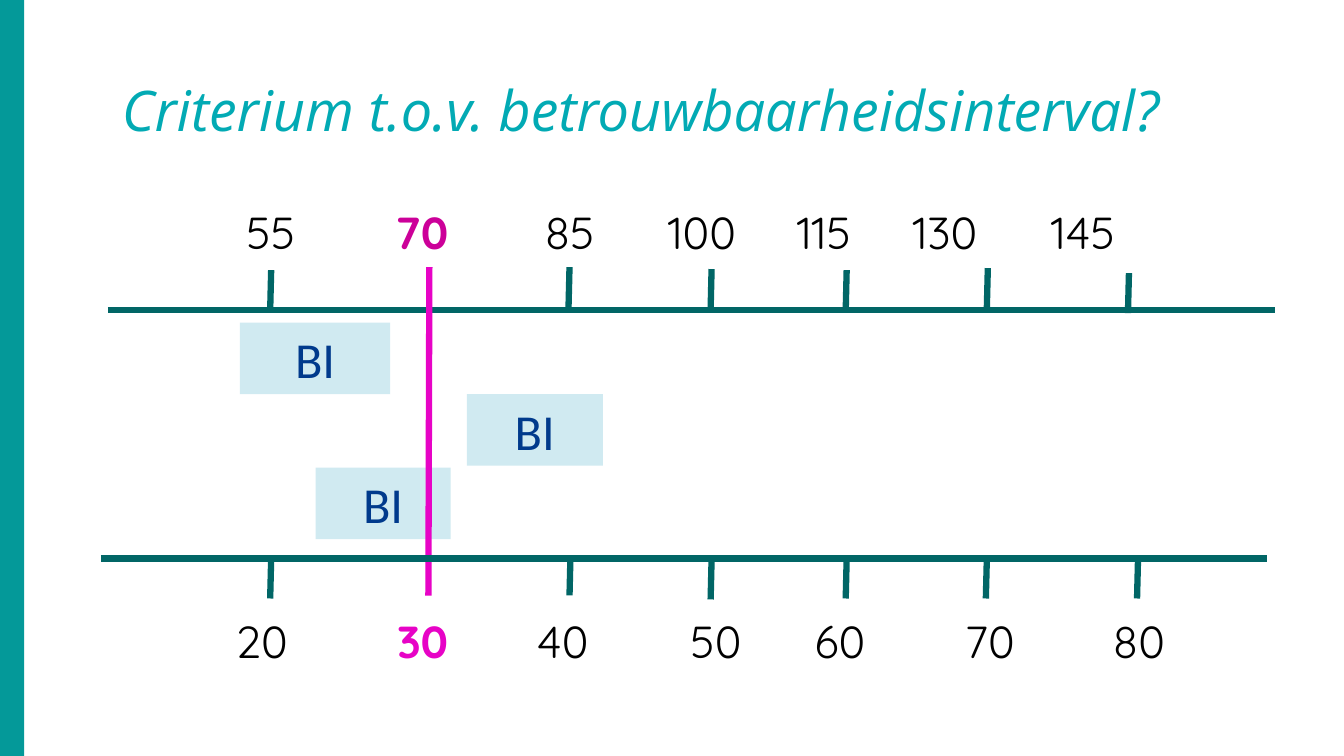
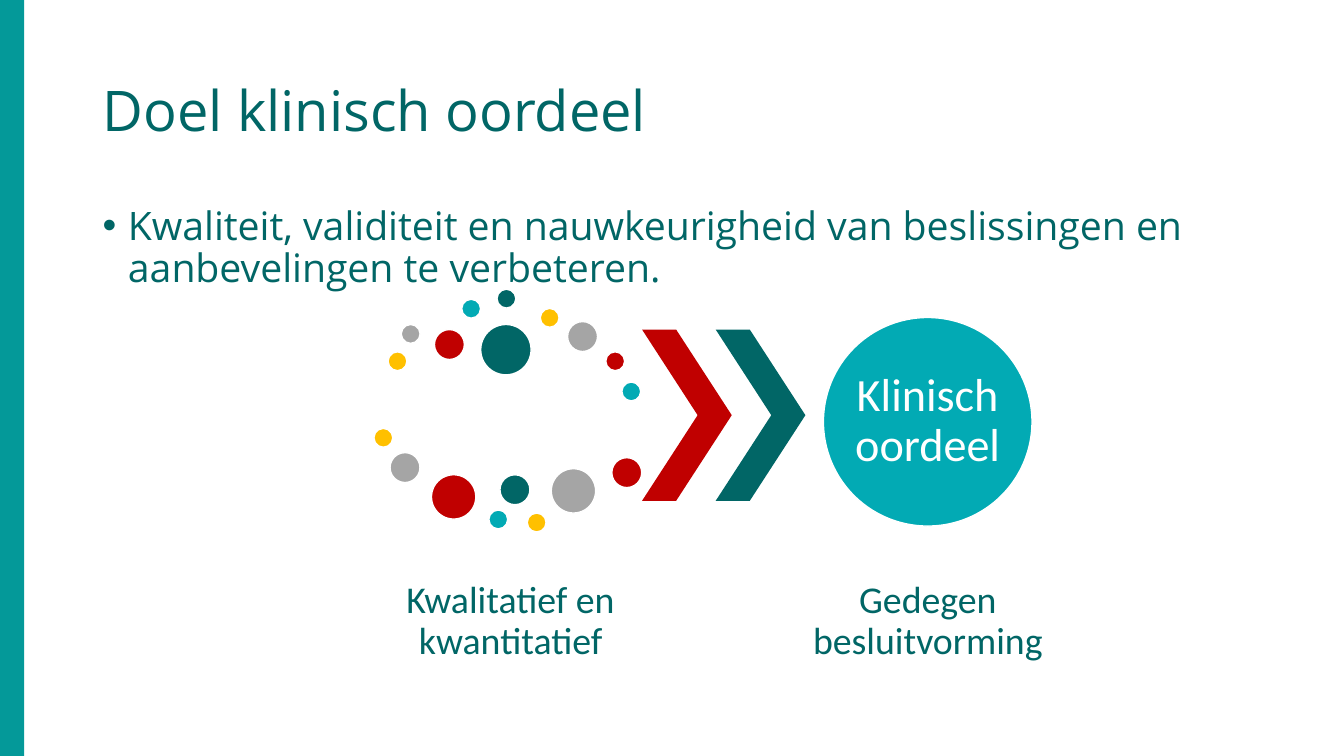
import pptx
import pptx.util
import pptx.dml.color
import pptx.enum.shapes
import pptx.enum.text
import pptx.oxml
import pptx.oxml.ns

Pt = pptx.util.Pt
RGBColor = pptx.dml.color.RGBColor
SHAPES = pptx.enum.shapes.MSO_SHAPE
ALIGN = pptx.enum.text.PP_ALIGN
ANCHOR = pptx.enum.text.MSO_ANCHOR

WHITE = RGBColor(0xFF, 0xFF, 0xFF)
BLACK = RGBColor(0x00, 0x00, 0x00)
BAND = RGBColor(0x04, 0x99, 0x99)
DARK_TEAL = RGBColor(0x01, 0x66, 0x66)
TURQUOISE = RGBColor(0x02, 0xAA, 0xB4)
PALE_BLUE = RGBColor(0xD0, 0xEA, 0xF1)
NAVY = RGBColor(0x00, 0x3A, 0x8C)
MAGENTA = RGBColor(0xCC, 0x00, 0x99)
PINK = RGBColor(0xE7, 0x03, 0xC6)
RED = RGBColor(0xC0, 0x00, 0x00)
YELLOW = RGBColor(0xFF, 0xC0, 0x00)
GREY = RGBColor(0xA5, 0xA5, 0xA5)

SLIDE_SIZE = (960, 540)
BAND_BOX = (0, 0, 17.3, 540)
TITLE_BOX = (66.2, 28.8, 828, 104.4)
BODY_BOX = (66.2, 144, 828, 342.7)

TITLE_FONT = {"name": "Open Sans", "size": Pt(40)}
BODY_FONT = {"name": "Open Sans", "size": Pt(28), "color": DARK_TEAL}
SCALE_FONT = {"name": "Quicksand", "size": Pt(32), "color": BLACK}
INTERVAL_FONT = {"name": "Calibri", "size": Pt(36), "color": NAVY}
CAPTION_FONT = {"name": "Calibri", "size": Pt(27), "color": DARK_TEAL}
GOAL_FONT = {"name": "Calibri", "size": Pt(33), "color": WHITE}

LINE_WIDTH = 4.5
TICK_LENGTH = 28.6
TICK_SLANT = 0.7
LABEL_SIZE = (100, 46)
CRITERION_LINE = ((306.7, 190.8), (306, 425.5))

TOP_SCALE = {
    "axis": (77, 910.8, 221.2),
    "label_top": 142.6,
    "highlight": MAGENTA,
    "labels": [("55", 193.6), ("70", 301.4), ("85", 407), ("100", 501.4),
               ("115", 588.6), ("130", 675), ("145", 773.6)],
    "ticks": [(193.7, 193), (406.8, 190.8), (508.3, 192.2),
              (604.8, 193), (705.6, 191.5), (806.4, 195.1)],
}
BOTTOM_SCALE = {
    "axis": (72, 905, 398.9),
    "label_top": 434.9,
    "highlight": PINK,
    "labels": [("20", 187), ("30", 302), ("40", 402), ("50", 511.4),
               ("60", 600), ("70", 707), ("80", 813.6)],
    "ticks": [(193.7, 398.9), (407.5, 396.7), (508.3, 399.6),
              (604.8, 398.9), (704.9, 398.9), (812.9, 398.9)],
}
HIGHLIGHTED = ("70", TOP_SCALE), ("30", BOTTOM_SCALE)
INTERVALS = [(171.4, 230.4, 107.3), (333.4, 281.5, 97.2), (225.4, 334.1, 96.5)]
INTERVAL_HEIGHT = 51.1

SMALL, MEDIUM, LARGE, LARGEST = 13.5, 21.4, 31.7, 36
DOTS = [
    (277.2, 251.3, SMALL, YELLOW), (286.6, 231.8, SMALL, GREY),
    (310.3, 235.4, MEDIUM, RED), (329.8, 213.8, SMALL, TURQUOISE),
    (355, 206.6, SMALL, DARK_TEAL), (385.9, 220.3, SMALL, YELLOW),
    (405.4, 229.7, MEDIUM, GREY), (432.7, 251.3, SMALL, RED),
    (444.2, 272.9, SMALL, TURQUOISE), (343.4, 231.8, LARGEST, DARK_TEAL),
    (267.1, 306, SMALL, YELLOW), (278.6, 323.3, MEDIUM, GREY),
    (308.2, 339.1, LARGE, RED), (349.2, 364.3, SMALL, TURQUOISE),
    (357.1, 339.1, MEDIUM, DARK_TEAL), (376.6, 366.5, SMALL, YELLOW),
    (393.8, 334.8, LARGE, GREY), (437, 326.9, MEDIUM, RED),
]
CHEVRONS = [(458.6, RED), (511.2, DARK_TEAL)]
CHEVRON_TOP, CHEVRON_SIZE, CHEVRON_POINT = 235.4, (64.1, 122.4), 0.62
GOAL_BOX = (588.2, 226.8, 149, 149)
CAPTIONS = [("Kwalitatief en kwantitatief", 277.2), ("Gedegen besluitvorming", 575.3)]
CAPTION_TOP, CAPTION_SIZE = 390.2, (175, 108)


def points(values):
    return [Pt(value) for value in values]


def format_font(font, values):
    for name, value in values.items():
        if name == "color":
            font.color.rgb = value
        else:
            setattr(font, name, value)


def write(shape, text, font, align=ALIGN.CENTER, anchor=ANCHOR.MIDDLE, spacing=0.9, margin=0):
    frame = shape.text_frame
    settings = {"word_wrap": True, "auto_size": pptx.enum.text.MSO_AUTO_SIZE.NONE,
                "vertical_anchor": anchor}
    settings.update({"margin_" + side: Pt(margin) for side in ("left", "right", "top", "bottom")})
    for name, value in settings.items():
        setattr(frame, name, value)
    frame.text = text
    paragraph = frame.paragraphs[0]
    for name, value in {"alignment": align, "line_spacing": spacing, "space_before": Pt(0)}.items():
        setattr(paragraph, name, value)
    format_font(paragraph.runs[0].font, font)
    return paragraph


def place(shape, box):
    for name, value in zip(("left", "top", "width", "height"), points(box)):
        setattr(shape, name, value)


def add_shape(slide, kind, box, fill, outline=None):
    shape = slide.shapes.add_shape(kind, *points(box))
    shape.shadow.inherit = False
    shape.fill.solid()
    shape.fill.fore_color.rgb = fill
    if outline is None:
        shape.line.fill.background()
    else:
        shape.line.color.rgb = outline
        shape.line.width = Pt(1)
    return shape


def add_line(slide, start, end, color):
    line = slide.shapes.add_connector(
        pptx.enum.shapes.MSO_CONNECTOR.STRAIGHT, *points(start + end))
    line.line.color.rgb = color
    line.line.width = Pt(LINE_WIDTH)
    line.element.spPr.append(pptx.oxml.parse_xml(
        f"<a:effectLst {pptx.oxml.ns.nsdecls('a')}/>"))


def add_label(slide, text, box, font, **layout):
    write(slide.shapes.add_textbox(*points(box)), text, font, **layout)


def add_master_band(presentation, slide):
    band = add_shape(slide, SHAPES.RECTANGLE, BAND_BOX, BAND)
    band.element.nvSpPr.cNvPr.set("id", "99")
    presentation.slide_master.shapes.element.insert(2, band.element)


def add_titled_slide(presentation, layout, title, indent=0, **style):
    slide = presentation.slides.add_slide(presentation.slide_layouts[layout])
    place(slide.shapes.title, TITLE_BOX)
    write(slide.shapes.title, title, {**TITLE_FONT, **style}, align=ALIGN.LEFT, margin=7.2)
    slide.shapes.title.text_frame.margin_left = Pt(7.2 + indent)
    return slide


def add_scale(slide, scale):
    left, right, height = scale["axis"]
    add_line(slide, (left, height), (right, height), DARK_TEAL)
    for x, top in scale["ticks"]:
        add_line(slide, (x, top), (x - TICK_SLANT, top + TICK_LENGTH), DARK_TEAL)
    for text, center in scale["labels"]:
        font = dict(SCALE_FONT)
        if (text, scale) in HIGHLIGHTED:
            font.update(bold=True, color=scale["highlight"])
        box = (center - LABEL_SIZE[0] / 2, scale["label_top"], *LABEL_SIZE)
        add_label(slide, text, box, font, spacing=1)


def build_interval_slide(presentation):
    slide = add_titled_slide(presentation, 5, "Criterium t.o.v. betrouwbaarheidsinterval?",
                             indent=13.7, color=TURQUOISE, italic=True)
    add_master_band(presentation, slide)
    for left, top, width in INTERVALS:
        box = (left, top, width, INTERVAL_HEIGHT)
        write(add_shape(slide, SHAPES.RECTANGLE, box, PALE_BLUE), "BI", INTERVAL_FONT, spacing=1)
    add_scale(slide, TOP_SCALE)
    add_line(slide, *CRITERION_LINE, PINK)
    add_scale(slide, BOTTOM_SCALE)


def build_goal_slide(presentation):
    slide = add_titled_slide(presentation, 1, "Doel klinisch oordeel", color=DARK_TEAL)
    body = slide.placeholders[1]
    place(body, BODY_BOX)
    paragraph = write(
        body, "Kwaliteit, validiteit en nauwkeurigheid van beslissingen en aanbevelingen te verbeteren.",
        BODY_FONT, align=ALIGN.LEFT, anchor=ANCHOR.TOP, margin=7.2)
    body.text_frame.margin_top = body.text_frame.margin_bottom = Pt(3.6)
    properties = paragraph._p.get_or_add_pPr()
    properties.set("marL", str(Pt(18)))
    properties.set("indent", str(-Pt(18)))
    for tag in ('buFont typeface="Arial"', 'buChar char="•"'):
        properties.append(pptx.oxml.parse_xml(f"<a:{tag} {pptx.oxml.ns.nsdecls('a')}/>"))

    for left, top, size, color in DOTS:
        add_shape(slide, SHAPES.OVAL, (left, top, size, size), color, WHITE)
    for left, color in CHEVRONS:
        chevron = add_shape(slide, SHAPES.CHEVRON, (left, CHEVRON_TOP, *CHEVRON_SIZE), color)
        chevron.adjustments[0] = CHEVRON_POINT
    write(add_shape(slide, SHAPES.OVAL, GOAL_BOX, TURQUOISE, WHITE), "Klinisch oordeel", GOAL_FONT)
    for text, left in CAPTIONS:
        add_label(slide, text, (left, CAPTION_TOP, *CAPTION_SIZE), CAPTION_FONT, margin=2.9)


def main():
    presentation = pptx.Presentation()
    presentation.slide_width, presentation.slide_height = points(SLIDE_SIZE)
    build_interval_slide(presentation)
    build_goal_slide(presentation)
    presentation.save("out.pptx")


if __name__ == "__main__":
    main()
